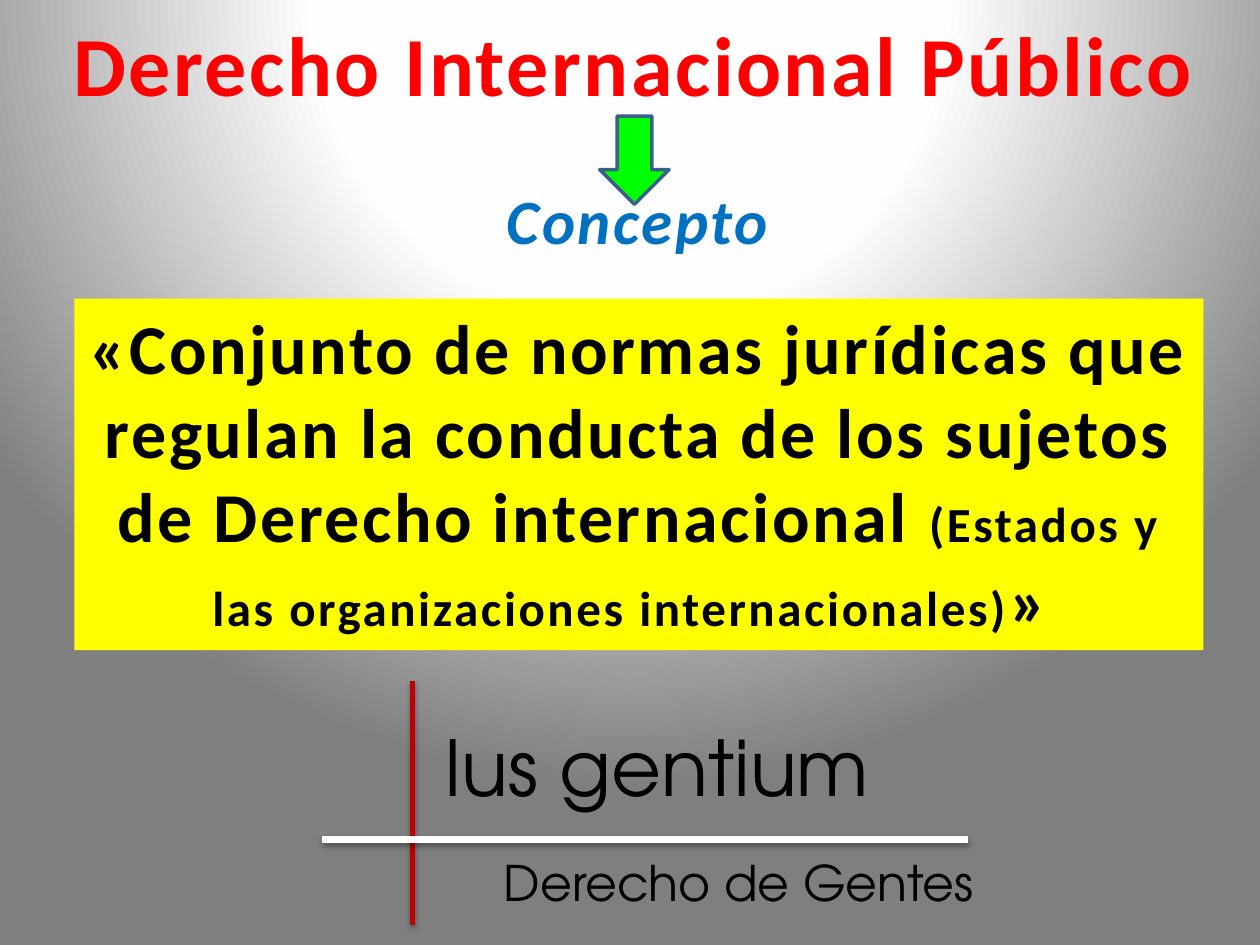
"""Build the slide defining Derecho Internacional Público (Ius gentium)."""
from dataclasses import dataclass

from lxml import etree
from pptx import Presentation
from pptx import oxml
from pptx import util as u
from pptx.dml.color import RGBColor
from pptx.enum import shapes, text
from pptx.oxml import ns


@dataclass(frozen=True)
class Theme:
    red: str = "FF0000"
    blue: str = "0070C0"
    green: str = "00FF00"
    outline: str = "3A5F8C"
    yellow: str = "FFFF00"
    dark_red: str = "C00000"
    white: str = "FFFFFF"
    black: str = "000000"
    backdrop: tuple = ((0, "FFFFFF"), (40, "FEFEFE"), (100, "7F7F7F"))
    title: int = 48
    motto: int = 44
    body: int = 40
    subtitle: int = 36
    detail: int = 28
    heading_font: str = "Calibri"
    motto_font: str = "TeX Gyre Adventor"


theme = Theme()


def add_text(parent, box, runs, color, font, wrap=True, heading=True):
    shape = parent.add_textbox(*map(u.Cm, box))
    frame = shape.text_frame
    frame.word_wrap = wrap
    frame.auto_size = text.MSO_AUTO_SIZE.SHAPE_TO_FIT_TEXT
    paragraph = frame.paragraphs[0]
    paragraph.alignment = text.PP_ALIGN.CENTER if heading else text.PP_ALIGN.LEFT
    paragraph.font.name = font
    paragraph.font.bold = heading
    paragraph.font.color.rgb = RGBColor.from_string(color)
    for words, size in runs:
        run = paragraph.add_run()
        run.text = words
        run.font.size = u.Pt(size)
        if heading:
            run.font._element.set("spc", "150")
    return shape


presentation = Presentation()
presentation.slide_width, presentation.slide_height = u.Cm(25.4), u.Cm(19.05)
slide = presentation.slides.add_slide(presentation.slide_layouts[6])

stops = "".join(
    f'<a:gs pos="{position * 1000}"><a:srgbClr val="{color}"/></a:gs>'
    for position, color in theme.backdrop
)
background = oxml.parse_xml(
    f'<p:bg {ns.nsdecls("p", "a")}><p:bgPr><a:gradFill rotWithShape="1">'
    f'<a:gsLst>{stops}</a:gsLst><a:path path="circle">'
    '<a:fillToRect l="50000" t="-80000" r="50000" b="180000"/></a:path>'
    '</a:gradFill><a:effectLst/></p:bgPr></p:bg>'
)
slide.element.cSld.insert(0, background)

add_text(slide.shapes, (1.09, 0.13, 23.37, 2.31),
         [("Derecho Internacional Público", theme.title)],
         theme.red, theme.heading_font, wrap=False)
concept = add_text(slide.shapes, (9.91, 3.53, 5.89, 1.8),
                   [("Concepto", theme.subtitle)],
                   theme.blue, theme.heading_font, wrap=False)
concept.text_frame.paragraphs[0].font.italic = True

arrow = slide.shapes.add_shape(shapes.MSO_SHAPE.DOWN_ARROW,
                               *map(u.Cm, (12.09, 2.34, 1.4, 1.78)))
arrow.shadow.inherit = False
arrow.fill.solid()
arrow.fill.fore_color.rgb = RGBColor.from_string(theme.green)
arrow.line.color.rgb = RGBColor.from_string(theme.outline)
arrow.line.width = u.Pt(2)

definition = add_text(
    slide.shapes, (1.5, 6.02, 22.76, 7.09),
    [("«Conjunto de normas jurídicas que regulan la conducta de los sujetos "
      "de Derecho internacional ", theme.body),
     ("(Estados y las organizaciones internacionales)", theme.detail),
     ("» ", theme.body)],
    theme.black, theme.heading_font)
definition.fill.solid()
definition.fill.fore_color.rgb = RGBColor.from_string(theme.yellow)

emblem = slide.shapes.add_group_shape().shapes
for ends, color, width in (
    ((8.31, 13.72, 8.31, 18.64), theme.dark_red, 3),
    ((19.51, 16.92, 6.5, 16.92), theme.white, 4),
):
    rule = emblem.add_connector(shapes.MSO_CONNECTOR.STRAIGHT, *map(u.Cm, ends))
    rule.line.color.rgb = RGBColor.from_string(color)
    rule.line.width = u.Pt(width)
    effects = etree.SubElement(rule._element.spPr, ns.qn("a:effectLst"))
    shadow = etree.SubElement(effects, ns.qn("a:outerShdw"), blurRad="40000",
                              dist="23000", dir="5400000", rotWithShape="0")
    tint = etree.SubElement(shadow, ns.qn("a:srgbClr"), val=theme.black)
    etree.SubElement(tint, ns.qn("a:alpha"), val="35000")

for box, words, size in (
    ((8.71, 14.38, 10.8, 2.13), "Ius gentium", theme.motto),
    ((9.91, 17.07, 10.8, 1.45), "Derecho de Gentes", theme.detail),
):
    add_text(emblem, box, [(words, size)], theme.black, theme.motto_font, heading=False)

presentation.save("out.pptx")
